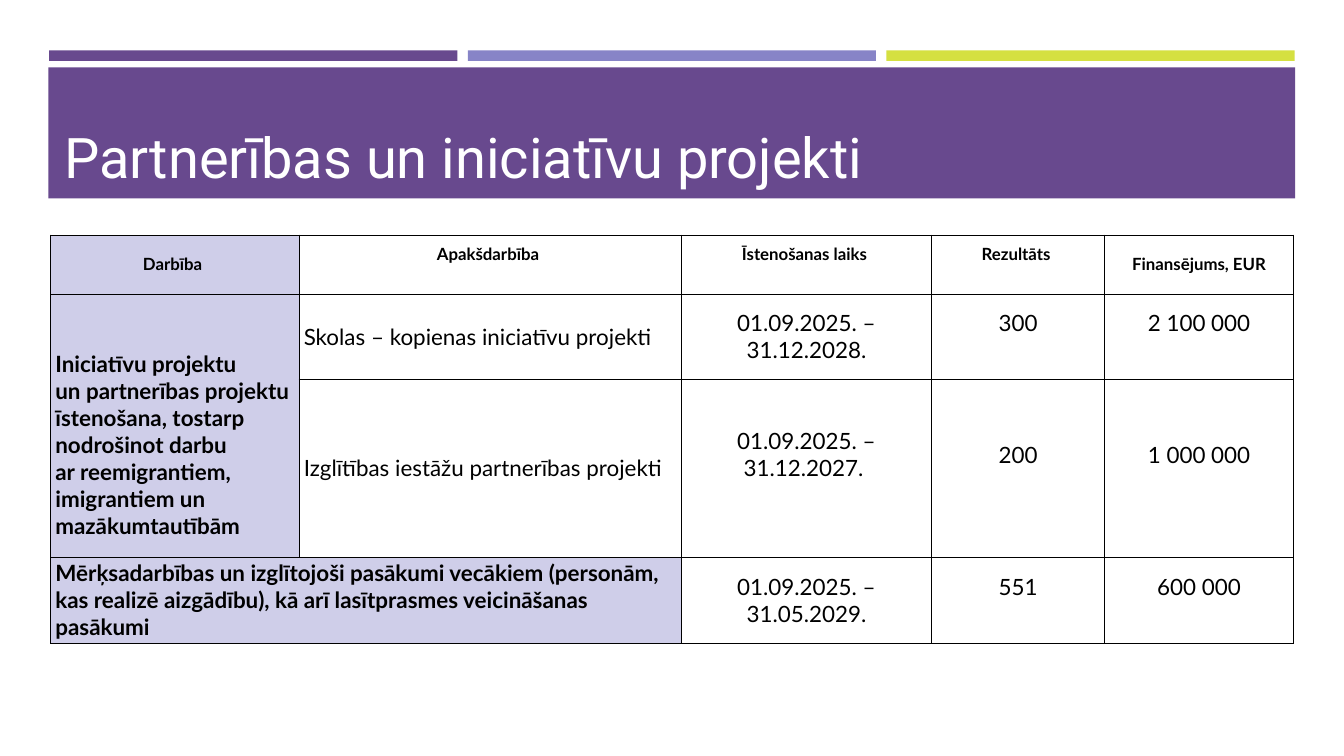
from dataclasses import dataclass

import pptx
import pptx.dml.color
import pptx.enum.shapes
import pptx.enum.text
import pptx.oxml
import pptx.oxml.ns
import pptx.util

Cm = pptx.util.Cm
Pt = pptx.util.Pt
Align = pptx.enum.text.PP_ALIGN
Anchor = pptx.enum.text.MSO_ANCHOR


@dataclass(frozen=True)
class Theme:
    purple: str = "68498E"
    lilac: str = "8784C7"
    lime: str = "D5E041"
    pale: str = "CFCEE9"
    white: str = "FFFFFF"
    black: str = "000000"
    title_font: str = "Roboto"
    body_font: str = "Lato"
    title_size: int = 80
    header_size: int = 24
    body_size: int = 32


THEME = Theme()


@dataclass(frozen=True)
class Block:
    left: float
    top: float
    width: float
    height: float
    color: str


@dataclass(frozen=True)
class Entry:
    """A table cell; space above and below is in centimetres."""
    row: int
    column: int
    lines: tuple[str, ...]
    size: int = THEME.body_size
    bold: bool = False
    centred: bool = True
    shaded: bool = False
    anchor: Anchor = Anchor.MIDDLE
    above: float = 0.13
    below: float = 0.13
    merge_to: tuple[int, int] | None = None


def rgb(color: str) -> pptx.dml.color.RGBColor:
    return pptx.dml.color.RGBColor.from_string(color)


def add_span(para, text: str, font: str, size: int, color: str, bold: bool = False) -> None:
    span = para.add_run()
    span.text = text
    span.font.name = font
    span.font.size = Pt(size)
    span.font.bold = bold
    span.font.color.rgb = rgb(color)


def draw_block(page, block: Block) -> None:
    shape = page.shapes.add_shape(
        pptx.enum.shapes.MSO_SHAPE.RECTANGLE,
        Cm(block.left), Cm(block.top), Cm(block.width), Cm(block.height))
    shape.shadow.inherit = False
    shape.fill.solid()
    shape.fill.fore_color.rgb = rgb(block.color)
    shape.line.fill.background()


def draw_title(page, text: str) -> None:
    box = page.shapes.add_textbox(Cm(3.23), Cm(3.91), Cm(61.29), Cm(5.64))
    frame = box.text_frame
    frame.word_wrap = True
    frame.vertical_anchor = Anchor.BOTTOM
    frame.margin_left = frame.margin_right = frame.margin_top = frame.margin_bottom = 0
    add_span(frame.paragraphs[0], text, THEME.title_font, THEME.title_size, THEME.white)


def add_borders(cell) -> None:
    properties = cell._tc.get_or_add_tcPr()
    for position, side in enumerate(("lnL", "lnR", "lnT", "lnB")):
        properties.insert(position, pptx.oxml.parse_xml(
            f'<a:{side} {pptx.oxml.ns.nsdecls("a")} w="{Pt(1)}"><a:solidFill>'
            f'<a:srgbClr val="{THEME.black}"/></a:solidFill></a:{side}>'))


def fill_cell(table, entry: Entry) -> None:
    cell = table.cell(entry.row, entry.column)
    if entry.merge_to:
        cell.merge(table.cell(*entry.merge_to))
    cell.vertical_anchor = entry.anchor
    cell.margin_top, cell.margin_bottom = Cm(entry.above), Cm(entry.below)
    if entry.shaded:
        cell.fill.solid()
        cell.fill.fore_color.rgb = rgb(THEME.pale)
    frame = cell.text_frame
    for number, line in enumerate(entry.lines):
        para = frame.add_paragraph() if number else frame.paragraphs[0]
        para.alignment = Align.CENTER if entry.centred else Align.LEFT
        add_span(para, line, THEME.body_font, entry.size, THEME.black, entry.bold)


def draw_table(page, widths: list[float], heights: list[float], entries: list[Entry]) -> None:
    table = page.shapes.add_table(
        len(heights), len(widths), Cm(2.54), Cm(11.84),
        Cm(sum(widths)), Cm(sum(heights))).table
    table.first_row = table.horz_banding = False
    for column, width in zip(table.columns, widths):
        column.width = Cm(width)
    for row, height in zip(table.rows, heights):
        row.height = Cm(height)
    for cell in table.iter_cells():
        cell.fill.background()
        cell.margin_left = cell.margin_right = Cm(0.25)
        add_borders(cell)
    for entry in entries:
        fill_cell(table, entry)


# Space that lifts centred text by half a line
HEADER_LIFT, BODY_LIFT = 1.15, 1.49

HEADERS = [
    ("Darbība ", 0.13),
    ("Apakšdarbība ", HEADER_LIFT),
    ("Īstenošanas laiks ", HEADER_LIFT),
    ("Rezultāts ", HEADER_LIFT),
    ("Finansējums, EUR", 0.13),
]

# Dates, space below them, result, funding
FIGURES = [
    (("01.09.2025. –", "31.12.2028."), 0.13, "300", "2 100 000"),
    (("01.09.2025. –", "31.12.2027. "), BODY_LIFT, "200", "1 000 000"),
    (("01.09.2025. –", "31.05.2029."), 0.13, "551", "600 000"),
]

ACTIVITIES = [
    Entry(1, 0, ("Iniciatīvu projektu", "un partnerības projektu",
                 "īstenošana, tostarp", "nodrošinot darbu", "ar reemigrantiem,",
                 "imigrantiem un", "mazākumtautībām"),
          bold=True, centred=False, shaded=True, anchor=Anchor.TOP,
          above=2.85, merge_to=(2, 0)),
    Entry(1, 1, ("Skolas – kopienas iniciatīvu projekti",), centred=False),
    Entry(2, 1, ("Izglītības iestāžu partnerības projekti",), centred=False),
    Entry(3, 0, ("Mērķsadarbības un izglītojoši pasākumi vecākiem (personām,",
                 "kas realizē aizgādību), kā arī lasītprasmes veicināšanas pasākumi"),
          bold=True, centred=False, shaded=True, anchor=Anchor.TOP, merge_to=(3, 1)),
]


def main() -> None:
    deck = pptx.Presentation()
    deck.slide_width, deck.slide_height = Cm(67.74), Cm(38.1)
    page = deck.slides.add_slide(deck.slide_layouts[6])

    # Colour bars and title band
    for number, color in enumerate((THEME.purple, THEME.lilac, THEME.lime)):
        draw_block(page, Block(2.48 + number * 21.1, 2.54, 20.57, 0.53, color))
    draw_block(page, Block(2.44, 3.4, 62.84, 6.6, THEME.purple))
    draw_title(page, "Partnerības un iniciatīvu projekti")

    # Project table
    entries = [
        Entry(0, column, (text,), THEME.header_size, bold=True,
              shaded=column == 0, below=below)
        for column, (text, below) in enumerate(HEADERS)]
    entries += ACTIVITIES
    for row, (dates, below, result, funding) in enumerate(FIGURES, start=1):
        entries += [Entry(row, 2, dates, below=below),
                    Entry(row, 3, (result,), below=BODY_LIFT),
                    Entry(row, 4, (funding,), below=BODY_LIFT)]
    draw_table(page, [12.52, 19.28, 12.62, 8.71, 9.53], [2.97, 4.29, 8.97, 3.81], entries)

    deck.save("out.pptx")


if __name__ == "__main__":
    main()
